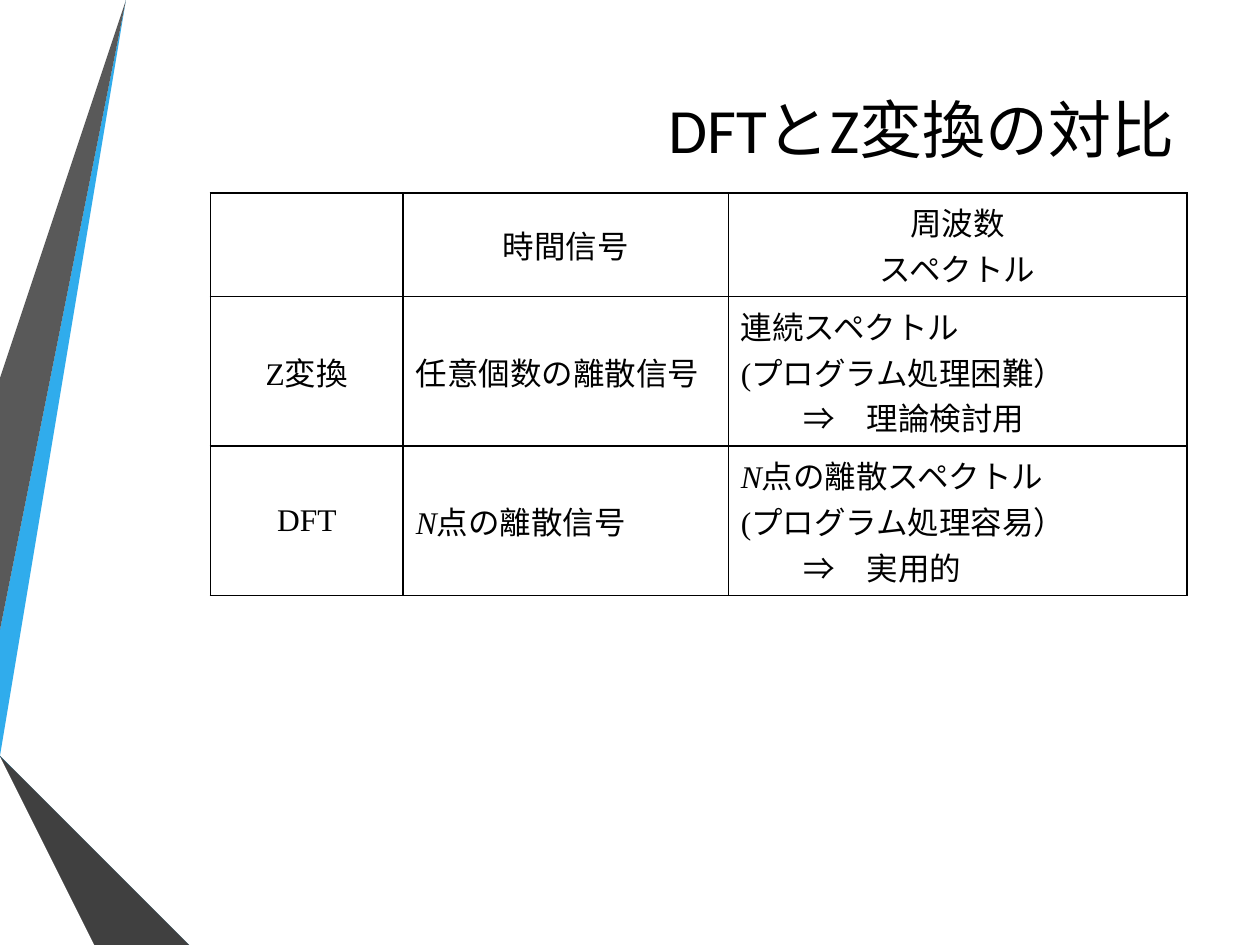
from lxml import etree
from pptx import Presentation
from pptx import util as u
from pptx.dml.color import RGBColor
from pptx.enum import text
from pptx.oxml.ns import qn

COLORS = {
    "ink": "000000", "sky": "30ACEC", "blue": "1287C3", "navy": "0C5A82",
    "gray": "595959", "charcoal": "404040", "coal": "262626",
}

RIBBONS = [
    ("sky", [(0, 5.44), (0, 5.75), (0.22, 5.79), (1.17, 0), (0.89, 0)]),
    ("gray", [(0.83, 0), (0.55, 0), (0, 3.36), (0, 5.06)]),
    ("coal", [(0, 6.19), (0, 6.21), (0.93, 7.5), (0.99, 7.5)]),
    ("navy", [(0, 5.79), (0, 5.8), (1.56, 7.5), (1.63, 7.5)]),
    ("blue", [(0, 5.79), (1.63, 7.5), (2.33, 7.5), (0.22, 5.79), (0, 5.75)]),
    ("charcoal", [(0, 6.19), (0.99, 7.5), (1.51, 7.5), (0, 5.86)]),
]

COLUMN_WIDTHS = [1.53, 2.58, 3.64]
ROW_HEIGHTS = [0.82, 1.18, 1.18]
COMPARISON = [
    [[], ["時間信号"], ["周波数", "スペクトル"]],
    [["Z変換"], ["任意個数の離散信号"],
     ["連続スペクトル", "(プログラム処理困難）", "⇒　理論検討用"]],
    [["DFT"], [("N", "点の離散信号")],
     [("N", "点の離散スペクトル"), "(プログラム処理容易）", "⇒　実用的"]],
]


class SlideBuilder:
    """Holds the style and the current slide, and adds each kind of element."""

    title_font, body_font = "Calibri", "Times New Roman"
    title_size, body_size = 36, 18
    border_width = 1

    def __init__(self, deck):
        self.slide = deck.slides.add_slide(deck.slide_layouts[5])

    def color(self, key):
        return RGBColor.from_string(COLORS[key])

    def run(self, paragraph, wording, font, size, italic=False):
        run = paragraph.add_run()
        run.text = wording
        run.font.name, run.font.size = font, u.Pt(size)
        run.font.italic = italic
        run.font.color.rgb = self.color("ink")

    def ribbon(self, fill, points):
        outline = self.slide.shapes.build_freeform(*points[0], scale=u.Inches(1))
        outline.add_line_segments(points[1:], close=True)
        band = outline.convert_to_shape()
        band.shadow.inherit = False
        band.fill.solid()
        band.fill.fore_color.rgb = self.color(fill)
        band.line.fill.background()

    def title(self, wording, left, top, width, height):
        heading = self.slide.shapes.title
        heading.left, heading.top = u.Inches(left), u.Inches(top)
        heading.width, heading.height = u.Inches(width), u.Inches(height)
        heading.text_frame.vertical_anchor = text.MSO_ANCHOR.MIDDLE
        paragraph = heading.text_frame.paragraphs[0]
        paragraph.alignment = text.PP_ALIGN.RIGHT
        self.run(paragraph, wording, self.title_font, self.title_size)
        self.slide.shapes._spTree.append(heading._element)

    def borders(self, cell):
        properties = cell._tc.get_or_add_tcPr()
        for position, side in enumerate(("a:lnL", "a:lnR", "a:lnT", "a:lnB")):
            line = etree.Element(qn(side), w=str(u.Pt(self.border_width)))
            fill = etree.SubElement(line, qn("a:solidFill"))
            etree.SubElement(fill, qn("a:srgbClr"), val=COLORS["ink"])
            properties.insert(position, line)

    def cell(self, cell, lines, centered):
        cell.fill.background()
        cell.vertical_anchor = text.MSO_ANCHOR.MIDDLE
        self.borders(cell)
        for number, line in enumerate(lines):
            frame = cell.text_frame
            paragraph = frame.add_paragraph() if number else frame.paragraphs[0]
            paragraph.alignment = (
                text.PP_ALIGN.CENTER if centered else text.PP_ALIGN.LEFT)
            if line[0] == "⇒":
                indent = u.Pt(2 * self.body_size)
                paragraph._p.get_or_add_pPr().set("marL", str(indent))
            for wording in [line] if isinstance(line, str) else line:
                self.run(paragraph, wording, self.body_font, self.body_size,
                         italic=wording == "N")

    def table(self, rows, left, top, widths, heights):
        grid = self.slide.shapes.add_table(
            len(heights), len(widths), u.Inches(left), u.Inches(top),
            u.Inches(sum(widths)), u.Inches(sum(heights))).table
        grid.first_row = grid.horz_banding = False
        for column, width in zip(grid.columns, widths):
            column.width = u.Inches(width)
        for r, (height, row) in enumerate(zip(heights, rows)):
            grid.rows[r].height = u.Inches(height)
            for c, lines in enumerate(row):
                self.cell(grid.cell(r, c), lines, centered=r == 0 or c == 0)


def main():
    deck = Presentation()
    deck.slide_width, deck.slide_height = u.Inches(10), u.Inches(7.5)
    builder = SlideBuilder(deck)
    for fill, points in RIBBONS:
        builder.ribbon(fill, points)
    builder.title("DFTとZ変換の対比", 0.92, 0.46, 8.5, 1.12)
    builder.table(COMPARISON, 1.67, 1.53, COLUMN_WIDTHS, ROW_HEIGHTS)
    deck.save("out.pptx")


if __name__ == "__main__":
    main()
